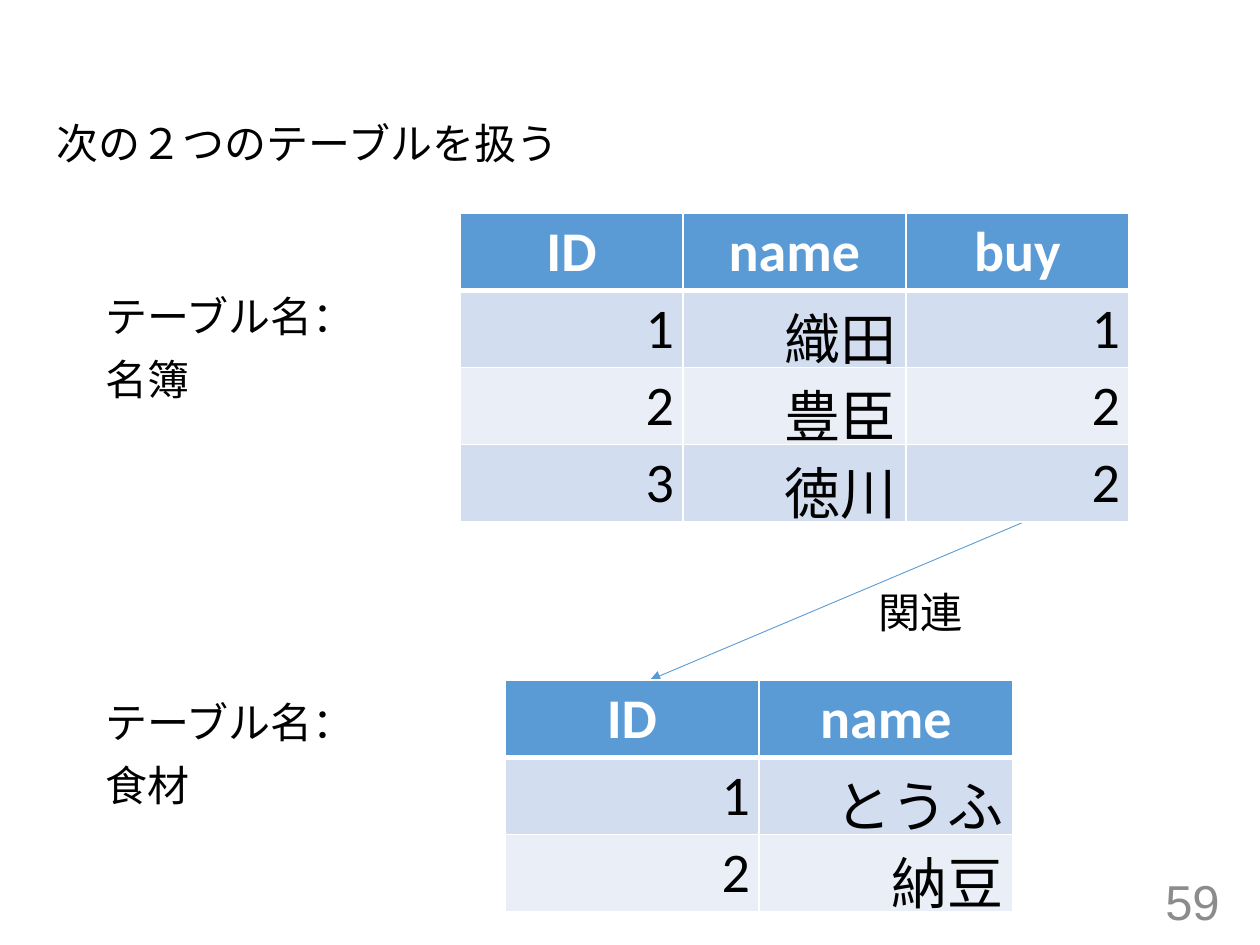
from lxml.etree import SubElement
from pptx import Presentation
from pptx.dml.color import RGBColor
from pptx.enum.shapes import MSO_CONNECTOR as Connector
from pptx.enum.text import MSO_ANCHOR as Anchor, MSO_AUTO_SIZE as AutoSize, PP_ALIGN as Align
from pptx.oxml.ns import qn
from pptx.util import Emu, Pt

EMU_PER_PX = 914400 / 126


def px(length):
    return Emu(round(length * EMU_PER_PX))


def color(value):
    return RGBColor.from_string(value)


class SlideBuilder:
    black, white, gray, blue = "000000", "FFFFFF", "8C8C8C", "5B9BD5"
    bands = ("D2DEEF", "EAEFF7")

    def __init__(self, slide):
        self.slide = slide

    def add_words(self, paragraph, words, font, size, ink, bold=False, align=Align.LEFT):
        paragraph.alignment = align
        run = paragraph.add_run()
        run.text = words
        run.font.name = font
        run.font.size = Pt(size)
        run.font.bold = bold
        run.font.color.rgb = color(ink)

    def body_lines(self, frame, lines):
        frame.word_wrap = True
        frame.auto_size = AutoSize.NONE
        for index, words in enumerate(lines):
            paragraph = frame.add_paragraph() if index else frame.paragraphs[0]
            paragraph.space_before = Pt(10)
            paragraph.line_spacing = 0.9
            properties = paragraph._p.get_or_add_pPr()
            properties.set("marL", "0")
            properties.set("indent", "0")
            SubElement(properties, qn("a:buNone"))
            self.add_words(paragraph, words, "Arial", 24, self.black)

    def body(self, left, top, width, height, lines):
        body = self.slide.placeholders[1]
        body.left, body.top, body.width, body.height = map(px, (left, top, width, height))
        self.body_lines(body.text_frame, lines)

    def text_box(self, left, top, width, height):
        return self.slide.shapes.add_textbox(*map(px, (left, top, width, height))).text_frame

    def caption(self, left, top, lines):
        self.body_lines(self.text_box(left, top, 654, 178), lines)

    def label(self, left, top, width, height, words):
        frame = self.text_box(left, top, width, height)
        frame.word_wrap = False
        frame.auto_size = AutoSize.SHAPE_TO_FIT_TEXT
        self.add_words(frame.paragraphs[0], words, "Calibri", 24, self.black)

    def page_number(self, left, top, width, height, number):
        frame = self.text_box(left, top, width, height)
        frame.word_wrap = True
        frame.vertical_anchor = Anchor.MIDDLE
        self.add_words(frame.paragraphs[0], number, "Arial", 28, self.gray, align=Align.RIGHT)

    def double_arrow(self, *ends):
        arrow = self.slide.shapes.add_connector(Connector.STRAIGHT, *map(px, ends))
        arrow.line.color.rgb = color(self.blue)
        arrow.line.width = Pt(0.5)
        properties = arrow._element.spPr
        line = properties.find(qn("a:ln"))
        for end in ("a:headEnd", "a:tailEnd"):
            SubElement(line, qn(end), type="triangle")
        SubElement(properties, qn("a:effectLst"))

    def borders(self, cell, top, bottom):
        properties = cell._tc.get_or_add_tcPr()
        widths = {"L": 1, "R": 1, "T": top, "B": bottom}
        for position, (side, width) in enumerate(widths.items()):
            edge = SubElement(properties, qn(f"a:ln{side}"), w=str(Pt(width)))
            fill = SubElement(edge, qn("a:solidFill"))
            SubElement(fill, qn("a:srgbClr"), val=self.white)
            properties.insert(position, edge)

    def table(self, left, top, column_width, row_height, records):
        rows, columns = len(records), len(records[0])
        box = map(px, (left, top, column_width * columns, row_height * rows))
        table = self.slide.shapes.add_table(rows, columns, *box).table
        for column in table.columns:
            column.width = px(column_width)
        for row_index, record in enumerate(records):
            table.rows[row_index].height = px(row_height)
            header = row_index == 0
            fill = self.blue if header else self.bands[(row_index - 1) % 2]
            ink = self.white if header else self.black
            align = Align.CENTER if header else Align.RIGHT
            for column_index, words in enumerate(record):
                cell = table.cell(row_index, column_index)
                cell.margin_left = cell.margin_right = px(9)
                cell.margin_top = cell.margin_bottom = px(5)
                cell.fill.solid()
                cell.fill.fore_color.rgb = color(fill)
                self.borders(cell, 3 if row_index == 1 else 1, 3 if header else 1)
                self.add_words(cell.text_frame.paragraphs[0], words, "Calibri", 32,
                               ink, header, align)


def main():
    deck = Presentation()
    deck.slide_width, deck.slide_height = px(1260), px(945)
    slide = deck.slides.add_slide(deck.slide_layouts[1])
    title = slide.shapes.title._element
    title.getparent().remove(title)

    builder = SlideBuilder(slide)
    builder.body(44, 117, 654, 64, ["次の２つのテーブルを扱う"])
    builder.page_number(949, 876, 283, 50, "59")
    builder.double_arrow(1043, 514, 650, 680)
    builder.label(866, 580, 111, 63, "関連")
    builder.table(460, 213, 223, 76, [
        ("ID", "name", "buy"),
        ("1", "織田", "1"),
        ("2", "豊臣", "2"),
        ("3", "徳川", "2"),
    ])
    builder.caption(93, 290, ["テーブル名：", "名簿"])
    builder.caption(93, 696, ["テーブル名：", "食材"])
    builder.table(505, 680, 254, 76, [
        ("ID", "name"),
        ("1", "とうふ"),
        ("2", "納豆"),
    ])
    deck.save("out.pptx")


if __name__ == "__main__":
    main()
